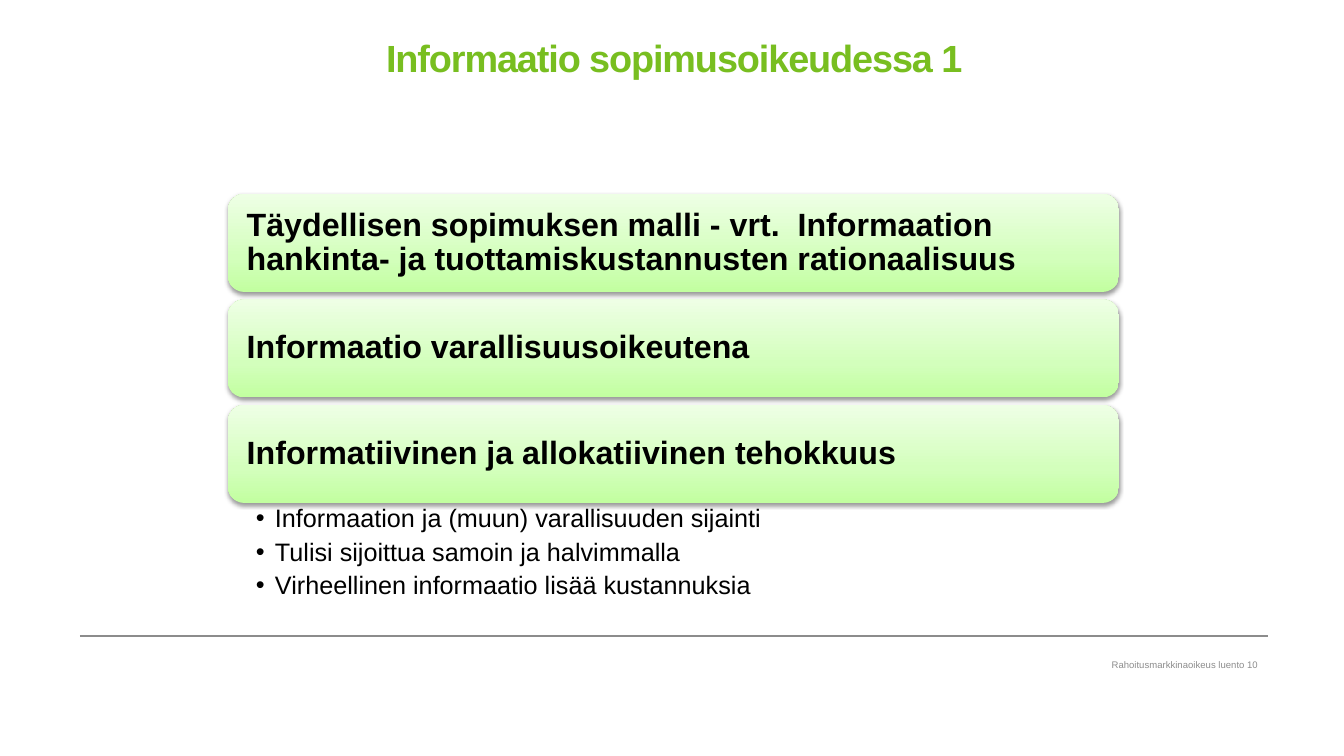
from lxml import etree
from pptx import Presentation
from pptx.dml.color import RGBColor
from pptx.enum.shapes import MSO_CONNECTOR, MSO_SHAPE
from pptx.enum.text import MSO_ANCHOR, PP_ALIGN
from pptx.oxml import parse_xml
from pptx.oxml.ns import nsdecls, qn
from pptx.util import Emu, Pt

TITLE = "Informaatio sopimusoikeudessa 1"
BARS = [
    "Täydellisen sopimuksen malli - vrt.  Informaation hankinta- ja tuottamiskustannusten rationaalisuus",
    "Informaatio varallisuusoikeutena",
    "Informatiivinen ja allokatiivinen tehokkuus",
]
BULLETS = [
    "Informaation ja (muun) varallisuuden sijainti",
    "Tulisi sijoittua samoin ja halvimmalla",
    "Virheellinen informaatio lisää kustannuksia",
]
FOOTER = "Rahoitusmarkkinaoikeus luento 10"

GREEN = RGBColor(0x78, 0xBE, 0x20)
BLACK = RGBColor(0, 0, 0)
GREY = RGBColor(0x8C, 0x8C, 0x8C)
BAR_STOPS = [(0, RGBColor(0xC2, 0xFF, 0xA0)),
             (35, RGBColor(0xD3, 0xFF, 0xBC)),
             (100, RGBColor(0xEE, 0xFF, 0xE5))]
FONT = "Arial"
LEFT, CENTER, RIGHT = PP_ALIGN.LEFT, PP_ALIGN.CENTER, PP_ALIGN.RIGHT
TOP, MIDDLE = MSO_ANCHOR.TOP, MSO_ANCHOR.MIDDLE

SLIDE_W, SLIDE_H = 1344, 756
MARGIN_X, MARGIN_W = 80, 1188
BAR_X, BAR_Y, BAR_W, BAR_H, BAR_PITCH = 228, 194, 891, 98, 105.5
BULLET_INDENT = 19


def px(n):
    return Emu(round(n * 914400 / 100.8))


def set_frame(s, insets, anchor):
    tf = s.text_frame
    tf.word_wrap = True
    tf.vertical_anchor = anchor
    tf.margin_left, tf.margin_top, tf.margin_right, tf.margin_bottom = map(px, insets)
    return tf


def add_text(p, text, size, color, bold=False, align=LEFT, spacing=1.0):
    p.alignment = align
    p.line_spacing = spacing
    r = p.add_run()
    r.text = text
    r.font.name, r.font.size, r.font.bold = FONT, Pt(size), bold
    r.font.color.rgb = color
    return r


def add_box(slide, x, y, w, h, insets=(0, 0, 0, 0), anchor=TOP):
    s = slide.shapes.add_textbox(px(x), px(y), px(w), px(h))
    return set_frame(s, insets, anchor)


def style_bar(s):
    """Vertical three-stop gradient, no outline, soft shadow below."""
    s.line.fill.background()
    stops = "".join(f'<a:gs pos="{pos * 1000}"><a:srgbClr val="{color}"/></a:gs>'
                    for pos, color in BAR_STOPS)
    spPr = s._element.spPr
    spPr.find(qn("a:prstGeom")).addnext(parse_xml(
        f'<a:gradFill {nsdecls("a")} rotWithShape="1"><a:gsLst>{stops}</a:gsLst>'
        '<a:lin ang="16200000" scaled="0"/></a:gradFill>'))
    spPr.append(parse_xml(
        f'<a:effectLst {nsdecls("a")}><a:outerShdw blurRad="{Pt(3.1)}" dist="{Pt(1.6)}" '
        'dir="5400000" rotWithShape="0"><a:srgbClr val="000000"><a:alpha val="38000"/>'
        '</a:srgbClr></a:outerShdw></a:effectLst>'))


def add_bullet(p):
    pPr = p._p.get_or_add_pPr()
    pPr.set("marL", str(px(BULLET_INDENT)))
    pPr.set("indent", str(-px(BULLET_INDENT)))
    etree.SubElement(pPr, qn("a:buFont")).set("typeface", FONT)
    etree.SubElement(pPr, qn("a:buChar")).set("char", "•")


def main():
    prs = Presentation()
    prs.slide_width, prs.slide_height = px(SLIDE_W), px(SLIDE_H)
    slide = prs.slides.add_slide(prs.slide_layouts[6])

    rule = slide.shapes.add_connector(MSO_CONNECTOR.STRAIGHT, px(MARGIN_X), px(636),
                                      px(MARGIN_X + MARGIN_W), px(636))
    rule.line.color.rgb = GREY
    rule.line.width = Pt(0.75)
    etree.SubElement(rule._element.spPr, qn("a:effectLst"))

    tf = add_box(slide, MARGIN_X, 42, MARGIN_W, 132)
    r = add_text(tf.paragraphs[0], TITLE, 27, GREEN, True, CENTER, 0.85)
    r.font._element.set("spc", "-80")

    for i, text in enumerate(BARS):
        s = slide.shapes.add_shape(MSO_SHAPE.ROUNDED_RECTANGLE, px(BAR_X),
                                   px(BAR_Y + i * BAR_PITCH), px(BAR_W), px(BAR_H))
        style_bar(s)
        tf = set_frame(s, (14, 10, 14, 10), MIDDLE)
        add_text(tf.paragraphs[0], text, 23, BLACK, True, spacing=0.9)

    tf = add_box(slide, BAR_X, 503, BAR_W, 97, (28, 3, 18, 3))
    for i, text in enumerate(BULLETS):
        p = tf.add_paragraph() if i else tf.paragraphs[0]
        p.space_after = Pt(4.4)
        add_text(p, text, 18, BLACK, spacing=0.9)
        add_bullet(p)

    tf = add_box(slide, 726, 656, 532, 17, anchor=MIDDLE)
    add_text(tf.paragraphs[0], FOOTER, 6.8, GREY, align=RIGHT)

    prs.save("out.pptx")


if __name__ == "__main__":
    main()
